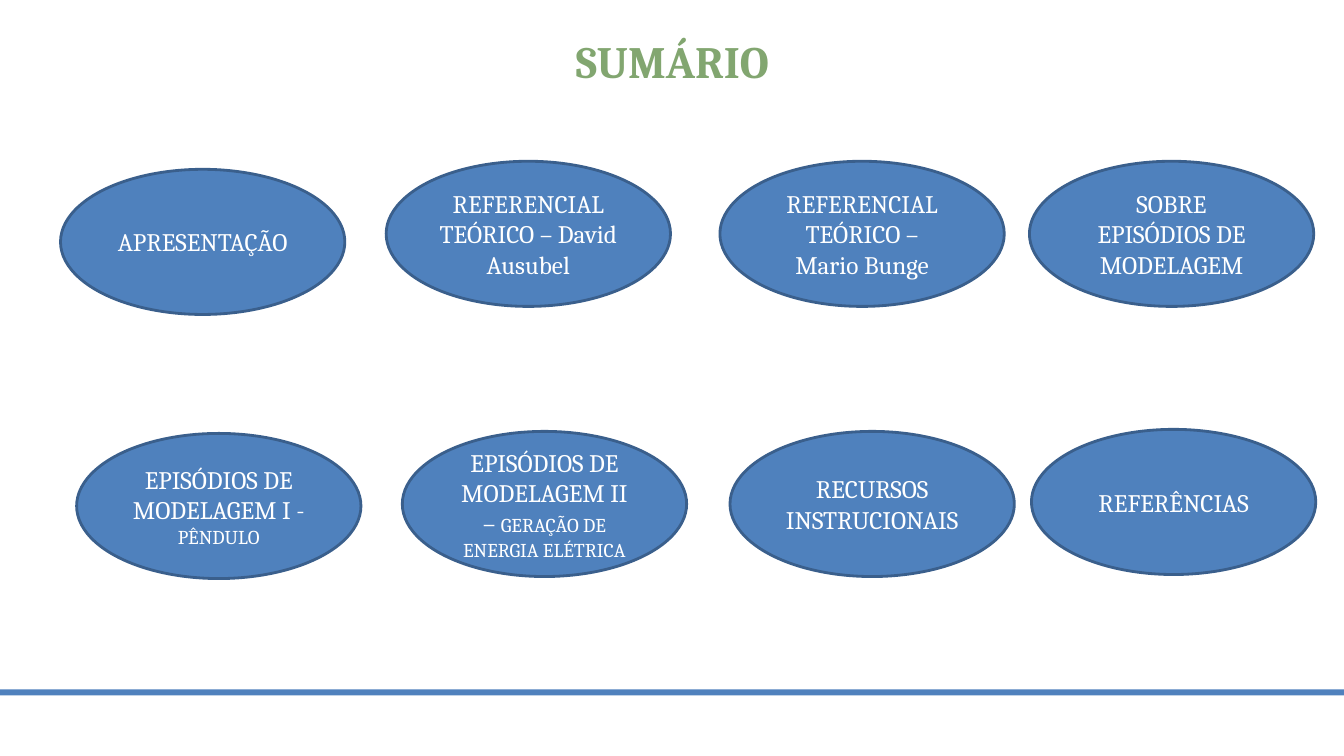
from pptx import Presentation, util as u
from pptx.dml.color import RGBColor
from pptx.enum import shapes, text

COLORS = {"title": "82A670", "blue": "4F81BD", "outline": "3A5F8C", "label": "FFFFFF"}
FONT = "Cambria"
SLIDE_W, SLIDE_H = 13.33, 7.5
TOPIC_W, TOPIC_H = 2.82, 1.44
MAIN, DETAIL = 18, 14

TOPICS = [
    (0.6, 1.68, [[("APRESENTAÇÃO", MAIN)]]),
    (3.83, 1.6, [[("REFERENCIAL TEÓRICO – David Ausubel", MAIN)]]),
    (7.14, 1.6, [[("REFERENCIAL TEÓRICO – Mario Bunge", MAIN)]]),
    (10.21, 1.6, [[("SOBRE", MAIN)], [("EPISÓDIOS DE MODELAGEM", MAIN)]]),
    (0.76, 4.3, [[("EPISÓDIOS DE MODELAGEM I - ", MAIN), ("PÊNDULO", DETAIL)]]),
    (3.99, 4.28, [[("EPISÓDIOS DE MODELAGEM II – ", MAIN),
                   ("GERAÇÃO DE ENERGIA ELÉTRICA", DETAIL)]]),
    (7.24, 4.28, [[("RECURSOS INSTRUCIONAIS", MAIN)]]),
    (10.23, 4.26, [[("REFERÊNCIAS", MAIN)]]),
]


def color(name):
    """Return the named palette colour."""
    return RGBColor.from_string(COLORS[name])


def inches(*lengths):
    """Convert lengths in inches to slide units."""
    return [u.Inches(length) for length in lengths]


def add_run(paragraph, wording, size, color_name, bold=False):
    """Append one formatted run to a centred paragraph."""
    paragraph.alignment = text.PP_ALIGN.CENTER
    run = paragraph.add_run()
    run.text = wording
    run.font.name, run.font.size, run.font.bold = FONT, u.Pt(size), bold
    run.font.color.rgb = color(color_name)


def add_heading(slide, box):
    """Place the slide heading in the title placeholder."""
    heading = slide.shapes.title
    heading.left, heading.top, heading.width, heading.height = inches(*box)
    heading.text_frame.vertical_anchor = text.MSO_ANCHOR.BOTTOM
    add_run(heading.text_frame.paragraphs[0], "SUMÁRIO", 32, "title", True)


def add_footer_rule(slide, box):
    """Draw the blue band across the foot of the slide."""
    rule = slide.shapes.add_shape(shapes.MSO_SHAPE.RECTANGLE, *inches(*box))
    rule.shadow.inherit = False
    rule.fill.solid()
    rule.fill.fore_color.rgb = color("blue")
    rule.line.fill.background()


def add_topic(slide, box, paragraphs):
    """Draw one topic ellipse with its label."""
    topic = slide.shapes.add_shape(shapes.MSO_SHAPE.OVAL, *inches(*box))
    topic.shadow.inherit = False
    topic.fill.solid()
    topic.fill.fore_color.rgb = color("blue")
    topic.line.color.rgb = color("outline")
    topic.line.width = u.Pt(2)
    label = topic.text_frame
    label.word_wrap = True
    label.vertical_anchor = text.MSO_ANCHOR.MIDDLE
    for index, runs in enumerate(paragraphs):
        paragraph = label.add_paragraph() if index else label.paragraphs[0]
        for wording, size in runs:
            add_run(paragraph, wording, size, "label")


def main():
    """Build the summary slide and save it."""
    deck = Presentation()
    deck.slide_width, deck.slide_height = inches(SLIDE_W, SLIDE_H)
    slide = deck.slides.add_slide(deck.slide_layouts[5])
    add_footer_rule(slide, (0, 6.84, SLIDE_W, 0.06))
    add_heading(slide, (1.42, 0.27, 10.5, 0.65))
    for left, top, paragraphs in TOPICS:
        add_topic(slide, (left, top, TOPIC_W, TOPIC_H), paragraphs)
    deck.save("out.pptx")


if __name__ == "__main__":
    main()
